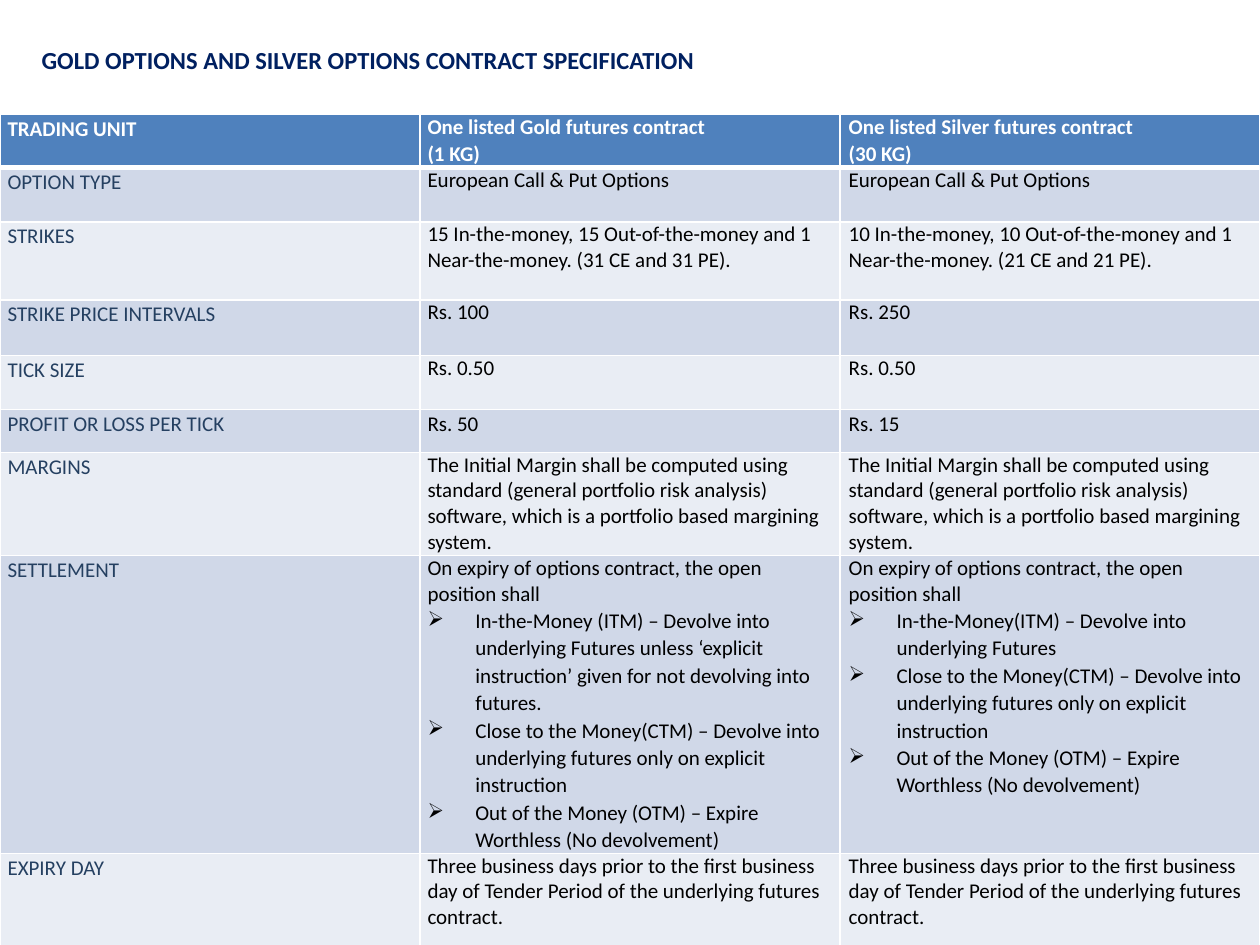
from lxml.etree import SubElement
from pptx import Presentation
from pptx.dml.color import RGBColor
from pptx.enum.text import MSO_ANCHOR, PP_ALIGN
from pptx.oxml import parse_xml
from pptx.oxml.ns import nsdecls, qn
from pptx.util import Inches, Pt

FONT = "Calibri"
NAVY, LABEL, BLACK, WHITE = "002060", "254061", "000000", "FFFFFF"
HEADER, BAND_DARK, BAND_LIGHT = "4F81BD", "D0D8E8", "E9EDF4"
LOOSE = 1.07  # line spacing of labels and bulleted points
BULLET = "➢"

MARGIN_RULE = ("The Initial Margin shall be computed using standard (general portfolio "
               "risk analysis) software, which is a portfolio based margining system.")
EXPIRY_RULE = ("Three business days prior to the first business day of Tender Period "
               "of the underlying futures contract.")
SETTLEMENT_INTRO = "On expiry of options contract, the open position shall"
CLOSE_AND_OUT = [
    BULLET + "Close to the Money(CTM) – Devolve into underlying futures only on explicit instruction",
    BULLET + "Out of the Money (OTM) – Expire Worthless (No devolvement)",
]

# Row height, label, gold terms, silver terms
ROWS = [
    (0.41, "TRADING UNIT", ["One listed Gold futures contract", "(1 KG)"],
     ["One listed Silver futures contract", "(30 KG)"]),
    (0.43, "OPTION TYPE", ["European Call & Put Options"], ["European Call & Put Options"]),
    (0.62, "STRIKES",
     ["15 In-the-money, 15 Out-of-the-money and 1 Near-the-money. (31 CE and 31 PE)."],
     ["10 In-the-money, 10 Out-of-the-money and 1 Near-the-money. (21 CE and 21 PE)."]),
    (0.44, "STRIKE PRICE INTERVALS", ["Rs. 100"], ["Rs. 250"]),
    (0.43, "TICK SIZE", ["Rs. 0.50"], ["Rs. 0.50"]),
    (0.34, "PROFIT OR LOSS PER TICK", ["Rs. 50"], ["Rs. 15"]),
    (0.82, "MARGINS", [MARGIN_RULE], [MARGIN_RULE]),
    (2.36, "SETTLEMENT",
     [SETTLEMENT_INTRO,
      BULLET + "In-the-Money (ITM) – Devolve into underlying Futures unless "
               "‘explicit instruction’ given for not devolving into futures.",
      *CLOSE_AND_OUT],
     [SETTLEMENT_INTRO,
      BULLET + "In-the-Money(ITM) – Devolve into underlying Futures",
      *CLOSE_AND_OUT]),
    (0.74, "EXPIRY DAY", [EXPIRY_RULE], [EXPIRY_RULE]),
]


def color(value):
    return RGBColor.from_string(value)


def style(para, size, value, bold=False):
    para.font.name = FONT
    para.font.size = Pt(size)
    para.font.bold = bold
    para.font.color.rgb = color(value)


def add_bullet(para):
    props = para._p.get_or_add_pPr()
    props.set("marL", str(Inches(0.38)))
    props.set("indent", str(-Inches(0.38)))
    SubElement(props, qn("a:buChar")).set("char", BULLET)


def set_borders(cell, bottom):
    props = cell._tc.get_or_add_tcPr()
    for index, (side, width) in enumerate(zip("LRTB", (1, 1, 1, bottom))):
        props.insert(index, parse_xml(
            f'<a:ln{side} {nsdecls("a")} w="{Pt(width)}"><a:solidFill>'
            f'<a:srgbClr val="{WHITE}"/></a:solidFill></a:ln{side}>'))


def fill_cell(cell, lines, value, bold, inset, loose_first):
    cell.margin_left = cell.margin_right = Inches(inset)
    cell.margin_top = cell.margin_bottom = 0
    cell.vertical_anchor = MSO_ANCHOR.TOP
    frame = cell.text_frame
    for index, line in enumerate(lines):
        para = frame.add_paragraph() if index else frame.paragraphs[0]
        para.text = line.removeprefix(BULLET)
        if index or loose_first:
            para.line_spacing = LOOSE
        if line.startswith(BULLET):
            add_bullet(para)
        style(para, 12, value, bold)


def place_title(page, left, top, width, height):
    title = page.shapes.title
    title.left, title.top, title.width, title.height = map(Inches, (left, top, width, height))
    frame = title.text_frame
    frame.word_wrap = True
    frame.vertical_anchor = MSO_ANCHOR.TOP
    frame.text = "GOLD OPTIONS AND SILVER OPTIONS CONTRACT SPECIFICATION"
    para = frame.paragraphs[0]
    para.alignment = PP_ALIGN.LEFT
    style(para, 14, NAVY, True)


def place_specification(page, left, top, width, height):
    table = page.shapes.add_table(
        len(ROWS), 3, *map(Inches, (left, top, width, height))).table
    table.horz_banding = False
    for column in table.columns:
        column.width = Inches(width / 3)
    for r, (row_height, label, gold, silver) in enumerate(ROWS):
        table.rows[r].height = Inches(row_height)
        is_header = r == 0
        band = HEADER if is_header else BAND_DARK if r % 2 else BAND_LIGHT
        for c, lines in enumerate(([label], gold, silver)):
            cell = table.cell(r, c)
            cell.fill.solid()
            cell.fill.fore_color.rgb = color(band)
            set_borders(cell, 3 if is_header else 1)
            value = WHITE if is_header else BLACK if c else LABEL
            loose_first = c == 0 or label == "PROFIT OR LOSS PER TICK"
            fill_cell(cell, lines, value, is_header, 0.07 if c == 2 else 0.06, loose_first)


def main():
    deck = Presentation()
    deck.slide_width, deck.slide_height = Inches(10), Inches(7.5)
    page = deck.slides.add_slide(deck.slide_layouts[5])  # Title Only
    place_title(page, 0.23, 0.31, 7.24, 0.55)
    place_specification(page, 0, 0.91, 10, sum(row[0] for row in ROWS))
    deck.save("out.pptx")


if __name__ == "__main__":
    main()
